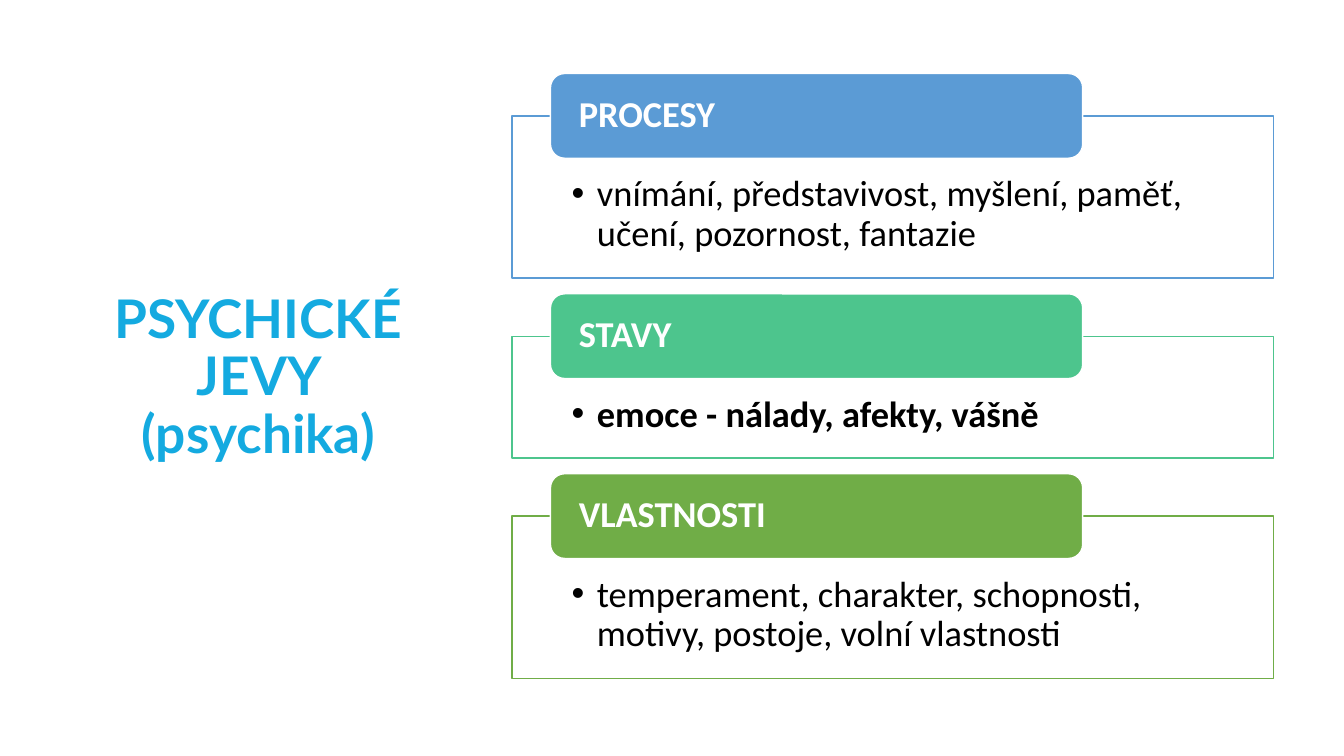
from lxml.etree import SubElement
from pptx import Presentation
from pptx.dml.color import RGBColor
from pptx.enum.shapes import MSO_SHAPE
from pptx.enum.text import MSO_ANCHOR, MSO_AUTO_SIZE, PP_ALIGN
from pptx.oxml.ns import qn
from pptx.util import Inches, Pt

COLORS = {
    "title": "14AAE0",
    "processes": "5B9BD5",
    "states": "4DC58D",
    "traits": "70AD47",
    "paper": "FFFFFF",
    "ink": "000000",
}

GROUPS = [
    ("PROCESY", "vnímání, představivost, myšlení, paměť, učení, pozornost, fantazie",
     "processes", 21.47, False),
    ("STAVY", "emoce - nálady, afekty, vášně", "states", 16.13, True),
    ("VLASTNOSTI", "temperament, charakter, schopnosti, motivy, postoje, volní vlastnosti",
     "traits", 21.47, False),
]

FIRST_TOP = 9.73
TAB_HEIGHT = 11.2
GROUP_GAP = 2.07


class PsycheSlide:
    def __init__(self, deck):
        self.width = deck.slide_width
        self.height = deck.slide_height
        self.slide = deck.slides.add_slide(deck.slide_layouts[4])
        self.title, *self.bodies = self.slide.placeholders

    def across(self, percent):
        return int(self.width * percent / 100)

    def down(self, percent):
        return int(self.height * percent / 100)

    def area(self, left, top, width, height):
        return (self.across(left), self.down(top), self.across(width), self.down(height))

    def apply(self, target, formats):
        for name, value in formats.items():
            setattr(target, name, value)

    def place(self, holder, left, top, width, height):
        spot = self.area(left, top, width, height)
        self.apply(holder, dict(zip(("left", "top", "width", "height"), spot)))

    def paint(self, shape, fill, outline):
        shape.fill.solid()
        shape.fill.fore_color.rgb = RGBColor.from_string(COLORS[fill])
        shape.line.color.rgb = RGBColor.from_string(COLORS[outline])
        shape.line.width = Pt(1)

    def add_wording(self, shape, wording, color, frame, alignment, font):
        self.apply(shape.text_frame, {
            "word_wrap": True, "auto_size": MSO_AUTO_SIZE.NONE, **frame})
        paragraph = shape.text_frame.paragraphs[0]
        self.apply(paragraph, {
            "alignment": alignment, "line_spacing": 0.9,
            "space_before": Pt(0), "space_after": Pt(0)})
        run = paragraph.add_run()
        run.text = wording
        self.apply(run.font, {"name": "Calibri", "size": Pt(26), "bold": True, **font})
        run.font.color.rgb = RGBColor.from_string(COLORS[color])

    def add_title(self, wording):
        self.place(self.title, 5.18, 9.33, 28.06, 81.47)
        self.add_wording(self.title, wording, "title",
                         {"vertical_anchor": MSO_ANCHOR.MIDDLE},
                         PP_ALIGN.CENTER, {"name": "Lato", "size": Pt(38)})

    def add_list(self, body, wording, accent, top, height, bold):
        self.place(body, 38.11, top, 56.64, height)
        self.paint(body, "paper", accent)
        tint = body.element.spPr.find(qn("a:solidFill"))[0]
        SubElement(tint, qn("a:alpha"), val="90000")
        paragraph = body.text_frame.paragraphs[0]
        paragraph.level = 1
        properties = paragraph._p.get_or_add_pPr()
        properties.set("marL", str(Inches(0.25)))
        properties.set("indent", str(-Inches(0.25)))
        SubElement(properties, qn("a:buFont"), typeface="Arial")
        SubElement(properties, qn("a:buChar"), char="•")
        self.add_wording(body, wording, "ink", {
            "vertical_anchor": MSO_ANCHOR.TOP,
            "margin_left": self.across(4.43), "margin_right": self.across(4.43),
            "margin_top": self.down(7.87), "margin_bottom": self.down(2.67),
        }, PP_ALIGN.LEFT, {"bold": bold})

    def add_tab(self, wording, accent, top):
        tab = self.slide.shapes.add_shape(
            MSO_SHAPE.ROUNDED_RECTANGLE, *self.area(40.96, top, 39.6, TAB_HEIGHT))
        tab.shadow.inherit = False
        self.paint(tab, accent, "paper")
        self.add_wording(tab, wording, "paper", {
            "vertical_anchor": MSO_ANCHOR.MIDDLE,
            "margin_left": self.across(1.8), "margin_right": self.across(1.8),
            "margin_top": 0, "margin_bottom": 0,
        }, PP_ALIGN.LEFT, {})

    def add_groups(self, groups):
        top = FIRST_TOP
        for body, (heading, members, accent, height, bold) in zip(self.bodies, groups):
            list_top = top + TAB_HEIGHT / 2
            self.add_list(body, members, accent, list_top, height, bold)
            self.add_tab(heading, accent, top)
            top = list_top + height + GROUP_GAP
        for spare in self.bodies[len(groups):]:
            spare.element.getparent().remove(spare.element)


def main():
    deck = Presentation()
    deck.slide_width = Inches(13.33)
    deck.slide_height = Inches(7.5)
    psyche = PsycheSlide(deck)
    psyche.add_title("PSYCHICKÉ JEVY (psychika)")
    psyche.add_groups(GROUPS)
    deck.save("out.pptx")


if __name__ == "__main__":
    main()
